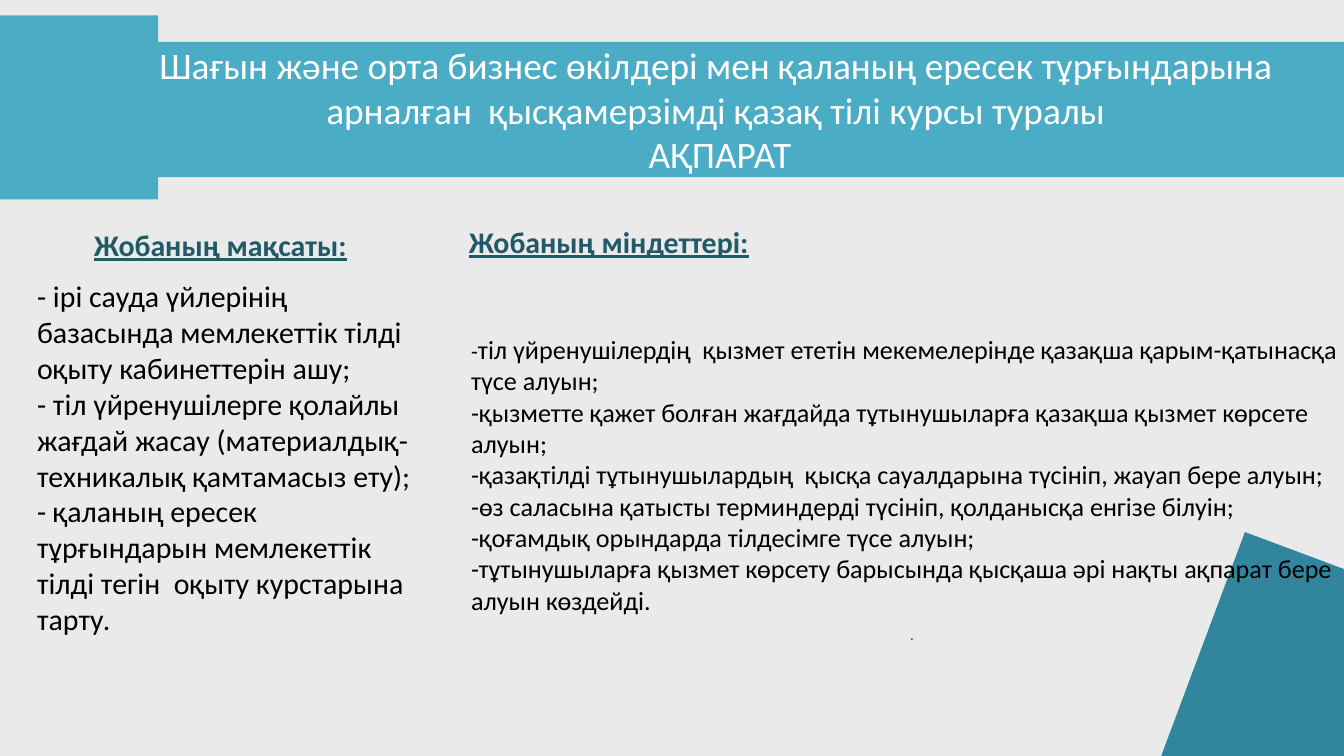
from dataclasses import dataclass

from pptx import Presentation
from pptx import util as u
from pptx.dml.color import RGBColor
from pptx.enum import shapes, text

EMU_PER_PX = 9525
COLORS = {
    "background": "EAEAEB",
    "banner": "4BACC6",
    "accent": "31859C",
    "heading": "215968",
    "body": "000000",
    "title": "FFFFFF",
    "muted": "545454",
}
GOALS = [
    "- ірі сауда үйлерінің базасында мемлекеттік тілді оқыту кабинеттерін ашу;",
    "- тіл үйренушілерге қолайлы жағдай жасау (материалдық-техникалық қамтамасыз ету);",
    "- қаланың ересек тұрғындарын мемлекеттік тілді тегін  оқыту курстарына тарту.",
]
FIRST_TASK = "тіл үйренушілердің  қызмет ететін мекемелерінде қазақша қарым-қатынасқа түсе алуын;"
OTHER_TASKS = [
    "-қызметте қажет болған жағдайда тұтынушыларға қазақша қызмет көрсете алуын;",
    "-қазақтілді тұтынушылардың  қысқа сауалдарына түсініп, жауап бере алуын;",
    "-өз саласына қатысты терминдерді түсініп, қолданысқа енгізе білуін;",
    "-қоғамдық орындарда тілдесімге түсе алуын;",
    "-тұтынушыларға қызмет көрсету барысында қысқаша әрі нақты ақпарат бере алуын көздейді.",
]
TITLE = [
    "Шағын және орта бизнес өкілдері мен қаланың ересек тұрғындарына  "
    "арналған  қысқамерзімді қазақ тілі курсы туралы ",
    "АҚПАРАТ",
]


def px(value):
    return u.Emu(value * EMU_PER_PX)


def color(name):
    return RGBColor.from_string(COLORS[name])


@dataclass
class Run:
    words: str
    size: float
    color: str = "body"
    font: str = "Calibri"
    heading: bool = False


@dataclass
class Paragraph:
    runs: list
    centered: bool = False
    spacing: float = 0


class SlideBuilder:
    def __init__(self, presentation):
        self.slide = presentation.slides.add_slide(presentation.slide_layouts[5])
        fill = self.slide.background.fill
        fill.solid()
        fill.fore_color.rgb = color("background")

    def rectangle(self, box, fill, rotation=0):
        shape = self.slide.shapes.add_shape(
            shapes.MSO_SHAPE.RECTANGLE, *map(px, box))
        shape.fill.solid()
        shape.fill.fore_color.rgb = color(fill)
        shape.line.fill.background()
        shape.shadow.inherit = False
        shape.rotation = rotation

    def textbox(self, box, paragraphs, insets=(0, 0, 0, 0)):
        shape = self.slide.shapes.add_textbox(*map(px, box))
        self.fill_frame(shape.text_frame, paragraphs, insets)

    def title(self, box, paragraphs):
        shape = self.slide.shapes.title
        shape.left, shape.top, shape.width, shape.height = map(px, box)
        shape.element.getparent().append(shape.element)
        self.fill_frame(shape.text_frame, paragraphs, (0, 0, 0, 0))

    def fill_frame(self, frame, paragraphs, insets):
        frame.word_wrap = True
        frame.auto_size = text.MSO_AUTO_SIZE.SHAPE_TO_FIT_TEXT
        frame.vertical_anchor = text.MSO_ANCHOR.TOP
        (frame.margin_left, frame.margin_top,
         frame.margin_right, frame.margin_bottom) = map(px, insets)
        for index, content in enumerate(paragraphs):
            paragraph = frame.add_paragraph() if index else frame.paragraphs[0]
            paragraph.alignment = (
                text.PP_ALIGN.CENTER if content.centered else text.PP_ALIGN.LEFT)
            paragraph.space_before = u.Pt(0)
            if content.spacing:
                paragraph.line_spacing = u.Pt(content.spacing)
            for item in content.runs:
                run = paragraph.add_run()
                run.text = item.words
                run.font.name = item.font
                run.font.size = u.Pt(item.size)
                run.font.bold = run.font.underline = item.heading
                run.font.color.rgb = color(item.color)


def main():
    presentation = Presentation()
    presentation.slide_width = px(1920)
    presentation.slide_height = px(1080)
    builder = SlideBuilder(presentation)

    builder.rectangle((1728, 795, 355, 404), "accent", 290.5)
    builder.textbox((53, 397, 548, 517),
                    [Paragraph([Run(goal, 32)]) for goal in GOALS])
    builder.textbox(
        (673, 438, 1260, 488),
        [Paragraph([Run("-", 24), Run(FIRST_TASK, 28)])]
        + [Paragraph([Run(task, 28)]) for task in OTHER_TASKS]
        + [Paragraph([Run(".", 22, "muted", "Manrope")], True, 30.8)],
        insets=(0, 38, 0, 0))
    builder.rectangle((-105, 60, 2130, 193), "banner")
    builder.rectangle((-98, 22, 324, 263), "banner")
    builder.title((218, 60, 1621, 194),
                  [Paragraph([Run(line, 40, "title")], True) for line in TITLE])
    builder.textbox(
        (75, 323, 480, 53),
        [Paragraph([Run("Жобаның мақсаты:", 32, "heading", heading=True)], True, 39)])
    builder.textbox(
        (660, 315, 443, 61),
        [Paragraph([Run("Жобаның міндеттері:", 32, "heading", heading=True)])],
        insets=(10, 5, 10, 5))

    presentation.save("out.pptx")


if __name__ == "__main__":
    main()
